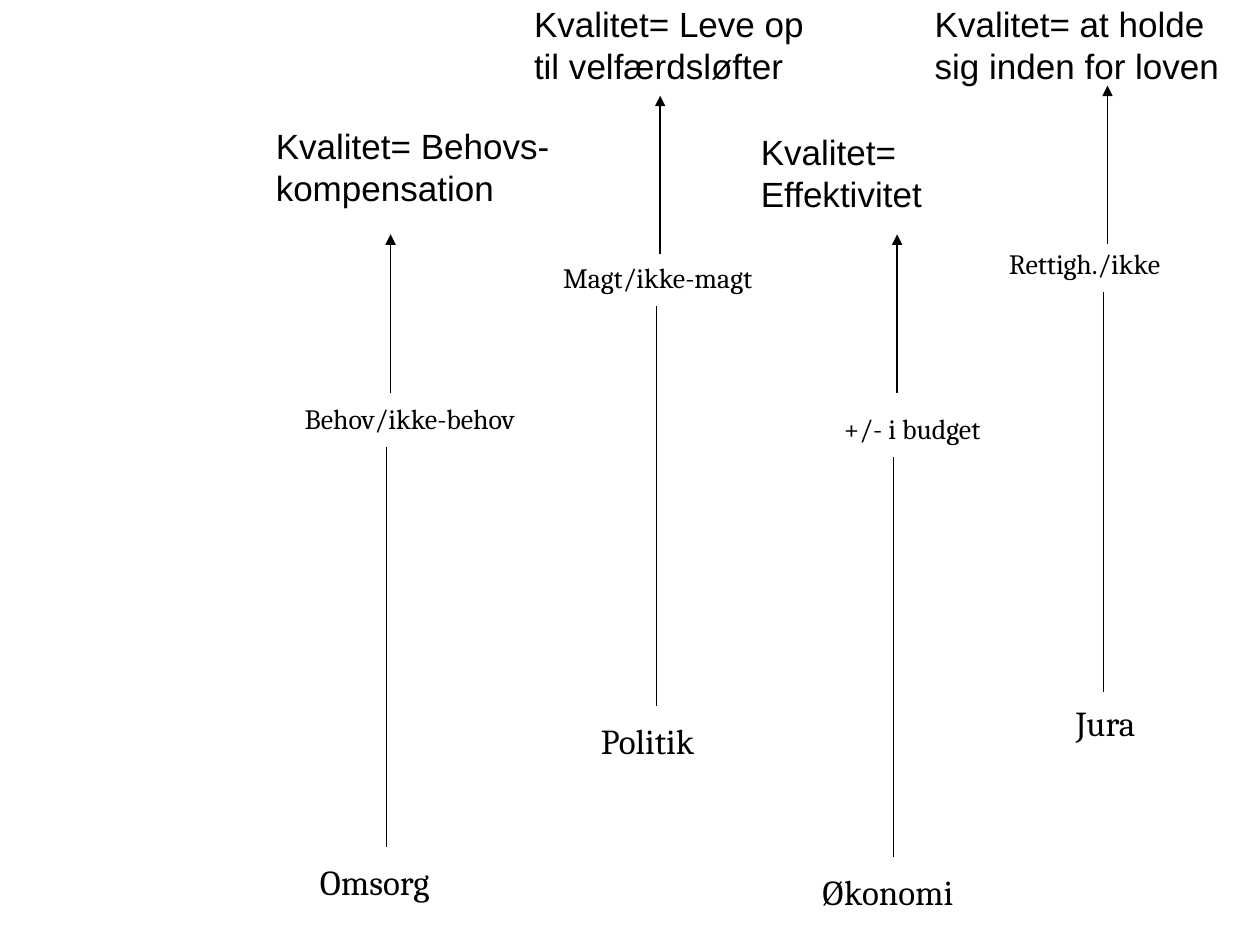
from pptx import Presentation
from pptx.dml.color import RGBColor
from pptx.enum.shapes import MSO_CONNECTOR as Conn
from pptx.enum.text import MSO_AUTO_SIZE as Auto, PP_ALIGN as Align
from pptx.oxml.ns import qn
from pptx.util import Inches as In, Pt
from lxml.etree import SubElement as Sub

BLACK = RGBColor(0, 0, 0)
SERIF, SANS = "Cambria", "Arial"

# Each axis: line (x, top), arrow foot, then texts as (text, left, top, width)
AXES = [
    {"line": (7.09, 3.63), "foot": 3.12,
     "name": ("Økonomi", 6.42, 6.86, 1.38),
     "code": ("+/- i budget", 6.6, 3.22, 1.44),
     "goal": ("Kvalitet= Effektivitet", 5.94, 0.99, 2.36)},
    {"line": (5.21, 2.43), "foot": 2.02,
     "name": ("Politik", 4.67, 5.66, 1.01),
     "code": ("Magt/ikke-magt", 4.37, 2.02, 1.78),
     "goal": ("Kvalitet= Leve op til velfærdsløfter", 4.14, -0.03, 2.36)},
    {"line": (8.76, 2.32), "foot": 1.94,
     "name": ("Jura", 8.44, 5.52, 0.71),
     "code": ("Rettigh./ikke", 7.91, 1.91, 1.46),
     "goal": ("Kvalitet= at holde sig inden for loven", 7.32, -0.03, 2.64)},
    {"line": (3.07, 3.55), "foot": 3.12,
     "name": ("Omsorg", 2.44, 6.78, 1.2),
     "code": ("Behov/ikke-behov", 2.32, 3.14, 1.99),
     "goal": ("Kvalitet= Behovs-kompensation", 2.09, 0.94, 2.68)},
]
AXIS, RISE, SHIFT = 3.17, 1.26, 0.03  # axis length, arrow length, arrow offset

# Format of each kind of text
STYLES = {
    "name": {"size": 20, "font": SERIF, "high": 0.43},
    "code": {"size": 16, "font": SERIF, "high": 0.37},
    "goal": {"size": 20, "font": SANS, "high": 0.77, "wrap": True},
}

deck = Presentation()
deck.slide_width, deck.slide_height = In(10), In(7.5)
slide = deck.slides.add_slide(deck.slide_layouts[6])


def add_text(text, left, top, width, *, size, font, high, wrap=False):
    box = slide.shapes.add_textbox(In(left), In(top), In(width), In(high))
    frame = box.text_frame
    frame.word_wrap = wrap
    frame.auto_size = Auto.SHAPE_TO_FIT_TEXT
    para = frame.paragraphs[0]
    para.alignment = Align.LEFT
    run = para.add_run()
    run.text = text
    run.font.size, run.font.name = Pt(size), font
    run.font.color.rgb = BLACK


def add_line(x, start, end, width, arrow=False):
    line = slide.shapes.add_connector(
        Conn.STRAIGHT, In(x), In(start), In(x), In(end))
    line.line.color.rgb = BLACK
    line.line.width = Pt(width)
    if arrow:
        Sub(line.line._get_or_add_ln(), qn("a:tailEnd"), type="triangle")
    Sub(line._element.spPr, qn("a:effectLst"))


for axis in AXES:
    # Axis line with the arrow above it
    x, top = axis["line"]
    add_line(x, top, top + AXIS, 0.75)
    add_line(x + SHIFT, axis["foot"], axis["foot"] - RISE, 1, arrow=True)
    # Name below, code in the middle, goal on top
    for kind, style in STYLES.items():
        add_text(*axis[kind], **style)

deck.save("out.pptx")
